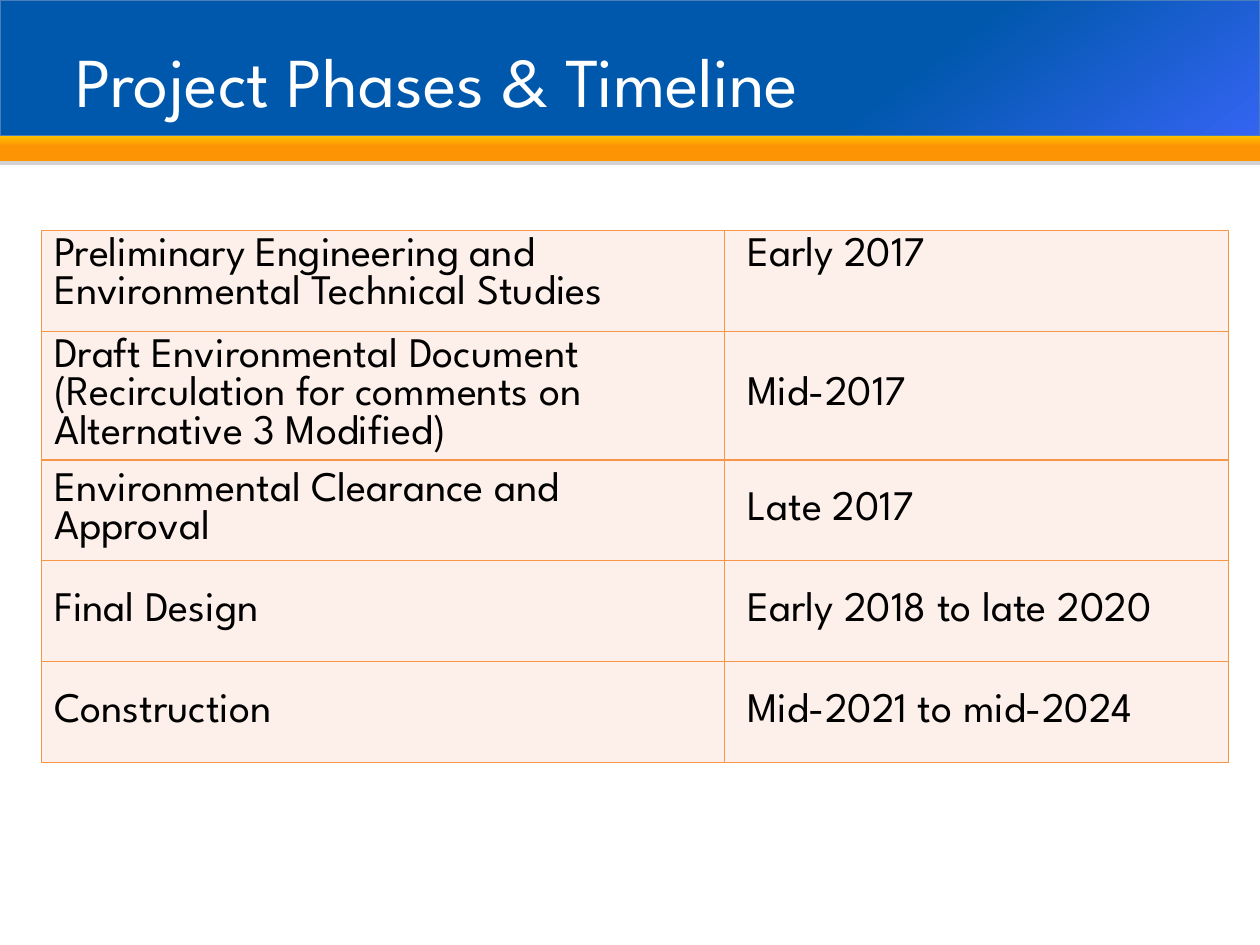
from copy import deepcopy

from lxml.etree import SubElement
from pptx import Presentation
from pptx.dml.color import RGBColor
from pptx.enum.shapes import MSO_SHAPE as Shape
from pptx.enum.text import MSO_ANCHOR as Anchor, PP_ALIGN as Align
from pptx.oxml import parse_xml
from pptx.oxml.ns import nsdecls, qn
from pptx.util import Inches, Pt

FONT = "League Spartan"
COLORS = {
    "blue": "0058AC", "violet": "3464F2", "blue_line": "4A7EBB",
    "gold": "FDBD00", "orange": "FD9404", "shadow": "808080",
    "border": "F79646", "cell": "FDEFE9", "text": "000000", "title": "FFFFFF",
}
PHASES = [
    ("Preliminary Engineering and Environmental Technical Studies", "Early 2017"),
    ("Draft Environmental Document (Recirculation for comments on "
     "Alternative 3 Modified)", "Mid-2017"),
    ("Environmental Clearance and Approval", "Late 2017"),
    ("Final Design", "Early 2018 to late 2020"),
    ("Construction", "Mid-2021 to mid-2024"),
]


def color(name):
    return RGBColor.from_string(COLORS[name])


def write_text(frame, text, size, ink, anchor=Anchor.MIDDLE):
    frame.word_wrap = True
    frame.vertical_anchor = anchor
    para = frame.paragraphs[0]
    para.alignment = Align.LEFT
    span = para.add_run()
    span.text = text
    span.font.name = FONT
    span.font.size = Pt(size)
    span.font.color.rgb = color(ink)


def add_band(page, box, stops, angle, line=None):
    """Add a rectangle with a clockwise gradient and a thin shadow below."""
    band = page.shapes.add_shape(Shape.RECTANGLE, *map(Inches, box))
    band.fill.gradient()
    band.fill.gradient_angle = 360 - angle
    stop_list = band.element.find(".//" + qn("a:gsLst"))
    stop_list.insert(1, deepcopy(stop_list[0]))
    for stop, (position, name) in zip(band.fill.gradient_stops, stops):
        stop.position = position
        stop.color.rgb = color(name)
    if line:
        band.line.color.rgb = color(line)
        band.line.width = Pt(0.75)
    else:
        band.line.fill.background()
    band.shadow.inherit = False
    effects = band.element.spPr.find(qn("a:effectLst"))
    shadow = SubElement(effects, qn("a:outerShdw"), blurRad="0",
                        dist=str(Pt(1.8)), dir="5400000", rotWithShape="0")
    tint = SubElement(shadow, qn("a:srgbClr"), val=COLORS["shadow"])
    SubElement(tint, qn("a:alpha"), val="35000")


def add_header(page, left, top, width, height):
    # Blue band over an orange strip
    strip = 0.2
    add_band(page, (left, top, width, height - strip),
             [(0, "blue"), (0.7, "blue"), (1, "violet")], 53, "blue_line")
    add_band(page, (left, top + height - strip, width, strip),
             [(0, "gold"), (0.4, "orange"), (1, "orange")], 90)

    # Title, brought in front of the bands
    title = page.shapes.title
    title.left, title.top = Inches(left + 0.5), Inches(top + 0.17)
    title.width, title.height = Inches(width - 1), Inches(0.92)
    write_text(title.text_frame, "Project Phases & Timeline", 40, "title")
    title.element.getparent().append(title.element)


def add_borders(cell):
    for index, side in enumerate(("lnL", "lnR", "lnT", "lnB")):
        border = parse_xml(
            f'<a:{side} {nsdecls("a")} w="{Pt(1)}"><a:solidFill>'
            f'<a:srgbClr val="{COLORS["border"]}"/></a:solidFill></a:{side}>')
        cell._tc.get_or_add_tcPr().insert(index, border)


def add_timeline(page, left, top, columns, rows):
    frame = page.shapes.add_table(
        len(rows), len(columns), Inches(left), Inches(top),
        Inches(sum(columns)), Inches(sum(rows)))
    table = frame.table
    table.first_row = table.horz_banding = False
    for column, width in zip(table.columns, columns):
        column.width = Inches(width)
    for number, (row, height, phase) in enumerate(zip(table.rows, rows, PHASES)):
        row.height = Inches(height)
        anchor = Anchor.MIDDLE if number else Anchor.TOP
        for cell, text, margin in zip(row.cells, phase, (0.1, 0.18)):
            cell.fill.solid()
            cell.fill.fore_color.rgb = color("cell")
            add_borders(cell)
            write_text(cell.text_frame, text, 24, "text")
            cell.vertical_anchor = anchor
            cell.margin_left = Inches(margin)


def main():
    deck = Presentation()
    deck.slide_width, deck.slide_height = Inches(10), Inches(7.5)
    page = deck.slides.add_slide(deck.slide_layouts[5])
    add_header(page, 0, 0, 10, 1.28)
    add_timeline(page, 0.33, 1.83, columns=(5.42, 4),
                 rows=(0.8, 1.02, 0.8, 0.8, 0.8))
    deck.save("out.pptx")


if __name__ == "__main__":
    main()
